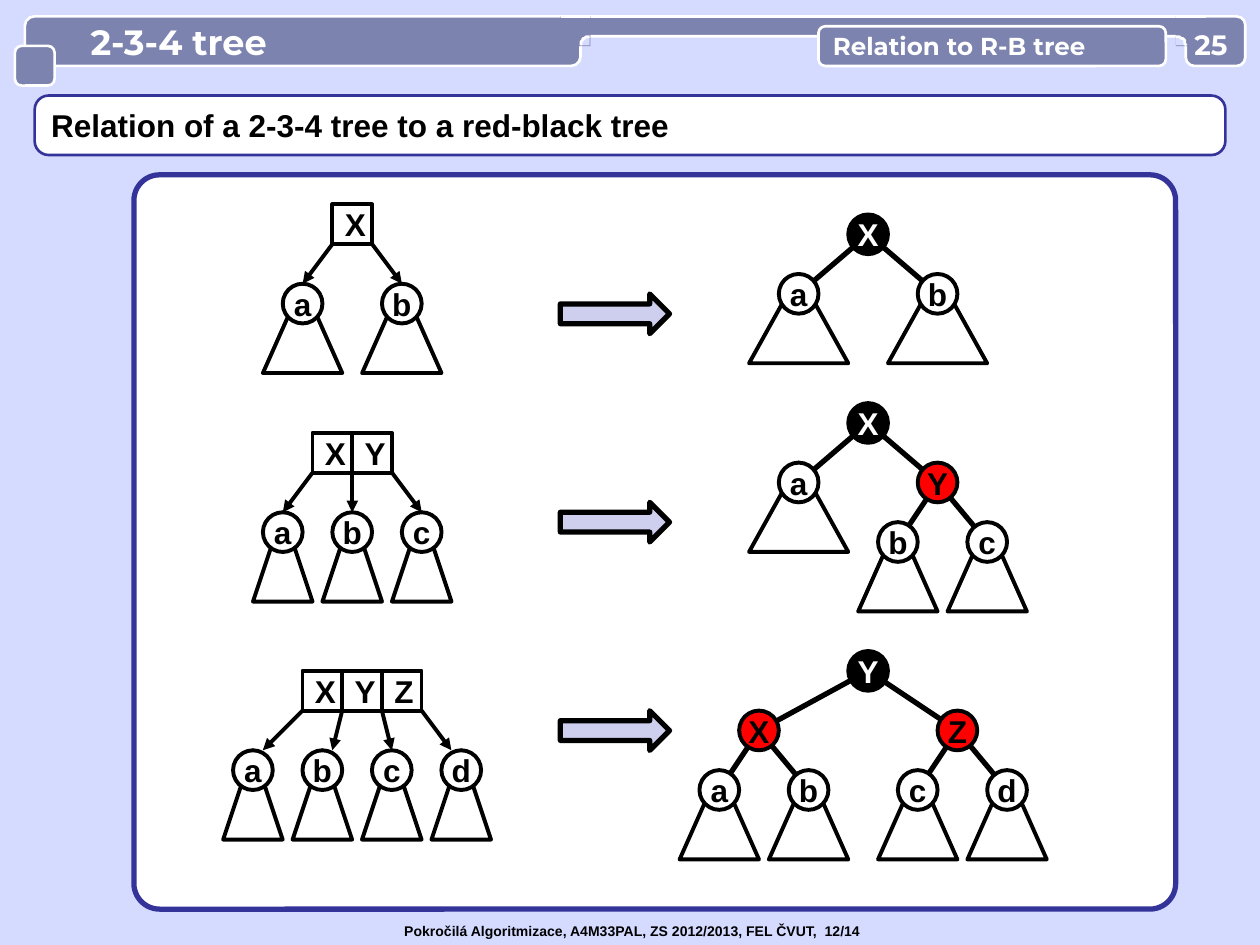
from dataclasses import dataclass
from math import cos, pi, sin
from typing import Optional

from pptx import Presentation
from pptx.dml.color import RGBColor
from pptx.enum.shapes import MSO_CONNECTOR, MSO_SHAPE
from pptx.enum.text import MSO_ANCHOR, PP_ALIGN
from pptx.oxml.ns import qn
from pptx.util import Pt
from lxml.etree import SubElement

COLORS = {
    "background": "D5DAFF", "bar": "7D83AF", "frame": "333399", "arrow": "CECEEF",
    "white": "FFFFFF", "black": "000000", "red": "FF0000",
}
GRID = 5.67  # 2 mm, the step that all trees are drawn on
SIZE = 4 * GRID  # side of a key box, diameter of a node
TRIANGLE_HEIGHT = 9 * GRID
LEVEL = 6 * GRID  # vertical distance between binary tree levels


@dataclass
class MultiwayTree:
    """Offsets of children and arrow tips are grid steps from the centre."""
    keys: str
    center: float
    top: float
    children: dict[str, int]
    tips: tuple[int, ...]
    subtree_width: int


@dataclass
class Node:
    """A binary tree node; x is in grid steps from the root."""
    label: str
    x: int
    depth: int
    parent: Optional[int]
    color: str = "white"
    leaf: bool = True


@dataclass
class BinaryTree:
    root_y: float
    nodes: list[Node]


ROOT_X = 496.1
MULTIWAY_TREES = [
    MultiwayTree("X", 201.3, 116.8, {"a": -5, "b": 5}, (-5, 5), 8),
    MultiwayTree("XY", 201.3, 247.4, {"a": -7, "b": 0, "c": 7}, (-7, 0, 7), 6),
    MultiwayTree("XYZ", 206.9, 383.4, {"a": -11, "b": -4, "c": 3, "d": 10}, (-10, -3, 3, 9), 6),
]
BINARY_TREES = [
    BinaryTree(133.9, [
        Node("X", 0, 0, None, "black", False), Node("a", -7, 1, 0), Node("b", 7, 1, 0),
    ]),
    BinaryTree(241.7, [
        Node("X", 0, 0, None, "black", False), Node("a", -7, 1, 0),
        Node("Y", 7, 1, 0, "red", False), Node("b", 3, 2, 2), Node("c", 12, 2, 2),
    ]),
    BinaryTree(383.4, [
        Node("Y", 0, 0, None, "black", False), Node("X", -11, 1, 0, "red", False),
        Node("Z", 9, 1, 0, "red", False), Node("a", -15, 2, 1), Node("b", -6, 2, 1),
        Node("c", 5, 2, 2), Node("d", 14, 2, 2),
    ]),
]


def rgb(name: str) -> RGBColor:
    return RGBColor.from_string(COLORS[name])


def style(sp, fill: Optional[str], line: Optional[str], width: float) -> None:
    sp.shadow.inherit = False
    if fill:
        sp.fill.solid()
        sp.fill.fore_color.rgb = rgb(fill)
    else:
        sp.fill.background()
    if line:
        sp.line.color.rgb = rgb(line)
        sp.line.width = Pt(width)
    else:
        sp.line.fill.background()


def add_shape(s, kind, x, y, w, h, fill, line="black", width=2.25, radius=None):
    sp = s.shapes.add_shape(kind, Pt(x), Pt(y), Pt(w), Pt(h))
    style(sp, fill, line, width)
    if radius is not None:
        sp.adjustments[0] = radius
    return sp


def set_text(sp, text: str, size=18, font="Arial", color="black", align=PP_ALIGN.LEFT,
             anchor=MSO_ANCHOR.MIDDLE, wrap=True, left=7.2, right=7.2, top=3.6, bottom=3.6) -> None:
    tf = sp.text_frame
    tf.word_wrap, tf.vertical_anchor = wrap, anchor
    tf.margin_left, tf.margin_right = Pt(left), Pt(right)
    tf.margin_top, tf.margin_bottom = Pt(top), Pt(bottom)
    p = tf.paragraphs[0]
    p.alignment = align
    r = p.add_run()
    r.text = text
    r.font.size, r.font.name, r.font.bold = Pt(size), font, True
    r.font.color.rgb = rgb(color)


def add_line(s, x1, y1, x2, y2, width, color="black", arrow=False):
    cx = s.shapes.add_connector(MSO_CONNECTOR.STRAIGHT, Pt(x1), Pt(y1), Pt(x2), Pt(y2))
    cx.line.color.rgb = rgb(color)
    cx.line.width = Pt(width)
    if arrow:
        SubElement(cx.line._get_or_add_ln(), qn("a:tailEnd"), type="triangle")
    SubElement(cx._element.spPr, qn("a:effectLst"))
    return cx


def add_node(s, label: str, x: float, y: float, color="white"):
    sp = add_shape(s, MSO_SHAPE.OVAL, x - SIZE / 2, y, SIZE, SIZE, color)
    set_text(sp, label, color="white" if color == "black" else "black",
             align=PP_ALIGN.CENTER, left=0, right=0, top=0, bottom=0)
    return sp


def add_subtree(s, x: float, y: float, steps: int) -> None:
    w = steps * GRID
    add_shape(s, MSO_SHAPE.ISOSCELES_TRIANGLE, x - w / 2, y, w, TRIANGLE_HEIGHT, "white")


def draw_multiway(s, tree: MultiwayTree) -> None:
    left = tree.center - len(tree.keys) * SIZE / 2
    for i, key in enumerate(tree.keys):
        box = add_shape(s, MSO_SHAPE.RECTANGLE, left + i * SIZE, tree.top, SIZE, SIZE, "white")
        set_text(box, key, align=PP_ALIGN.CENTER)
    child_y = tree.top + 2 * SIZE
    for i, ((label, step), tip) in enumerate(zip(tree.children.items(), tree.tips)):
        x = tree.center + step * GRID
        add_subtree(s, x, child_y, tree.subtree_width)
        node = add_node(s, label, x, child_y)
        cx = add_line(s, left + i * SIZE, tree.top + SIZE,
                      tree.center + tip * GRID, child_y, 2.25, arrow=True)
        if tip == step:
            cx.end_connect(node, 0)


def draw_binary(s, tree: BinaryTree) -> None:
    spots = [(ROOT_X + n.x * GRID, tree.root_y + n.depth * LEVEL) for n in tree.nodes]
    for n, spot in zip(tree.nodes, spots):
        if n.parent is not None:
            add_line(s, *spots[n.parent], *spot, 3)
    for n, (x, y) in zip(tree.nodes, spots):
        if n.leaf:
            add_subtree(s, x, y - SIZE / 2, 10 if n.depth == 1 else 8)
        add_node(s, n.label, x, y - SIZE / 2, n.color)


def draw_bar_joint(s, x: float, side: int) -> None:
    """Blend the thin bar into a tab whose edge is at x; side is 1 right, -1 left."""
    r, y = 5.67, 26.3
    outer, inner = x - 2 * side * r, x + side * r
    add_shape(s, MSO_SHAPE.RECTANGLE, min(outer, inner), 9.4, 3 * r, 3 * r, "bar", None)
    add_line(s, outer, 9.4, inner, 9.4, 1.5, "white")
    arc = [(inner - side * r * sin(k * pi / 16), y - r * cos(k * pi / 16)) for k in range(9)]
    for points, fill, line in ((arc + [(inner, y)], "background", None), (arc, None, "white")):
        fb = s.shapes.build_freeform(*points[0], scale=Pt(1))
        fb.add_line_segments(points[1:], close=fill is not None)
        style(fb.convert_to_shape(), fill, line, 1.5)


def draw_frame(s) -> None:
    rounded = MSO_SHAPE.ROUNDED_RECTANGLE
    add_shape(s, rounded, 76.5, 99.9, 595.3, 419.6, "white", "frame", 3, 0.035)
    heading = add_shape(s, rounded, 19.8, 54.6, 680.4, 34, "white", "frame", 1.5, 0.236)
    set_text(heading, "Relation of a 2-3-4 tree to a red-black tree")
    title = add_shape(s, rounded, 14.2, 9.4, 317.5, 28.3, "bar", "white", 1.5, 0.188)
    set_text(title, "2-3-4 tree", size=20, font="Montserrat", color="white", left=36)
    add_shape(s, rounded, 331.7, 9.4, 351.5, 11.3, "bar", "white", 1.5, 0.5)
    draw_bar_joint(s, 331.7, 1)
    add_shape(s, rounded, 8.5, 26.2, 22.7, 22.7, "bar", "white", 1.5, 0.17)
    add_shape(s, rounded, 677.6, 9.4, 34, 28.3, "bar", "white", 1.5, 0.17)
    draw_bar_joint(s, 677.6, -1)
    topic = add_shape(s, rounded, 467.7, 15, 198.5, 22.7, "bar", "white", 1.5, 0.17)
    set_text(topic, "Relation to R-B tree", size=14, font="Montserrat", color="white")
    number = s.shapes.add_textbox(Pt(677.6), Pt(15.8), Pt(28.8), Pt(19.4))
    set_text(number, "25", size=16, font="Montserrat", color="white",
             align=PP_ALIGN.CENTER, left=0, right=0, top=0, bottom=0)
    footer = s.shapes.add_textbox(Pt(223.9), Pt(523.4), Pt(280.8), Pt(17.3))
    set_text(footer, "Pokročilá Algoritmizace, A4M33PAL, ZS 2012/2013, FEL ČVUT,  12/14",
             size=8, anchor=MSO_ANCHOR.TOP, wrap=False)


def main() -> None:
    prs = Presentation()
    prs.slide_width, prs.slide_height = Pt(720), Pt(540)
    s = prs.slides.add_slide(prs.slide_layouts[6])
    s.background.fill.solid()
    s.background.fill.fore_color.rgb = rgb("background")
    draw_frame(s)
    for row, (multiway, binary) in enumerate(zip(MULTIWAY_TREES, BINARY_TREES)):
        draw_multiway(s, multiway)
        draw_binary(s, binary)
        add_shape(s, MSO_SHAPE.RIGHT_ARROW, 320.2, 168 + row * 21 * GRID, 62.4, SIZE, "arrow", width=3)
    prs.save("out.pptx")


if __name__ == "__main__":
    main()
